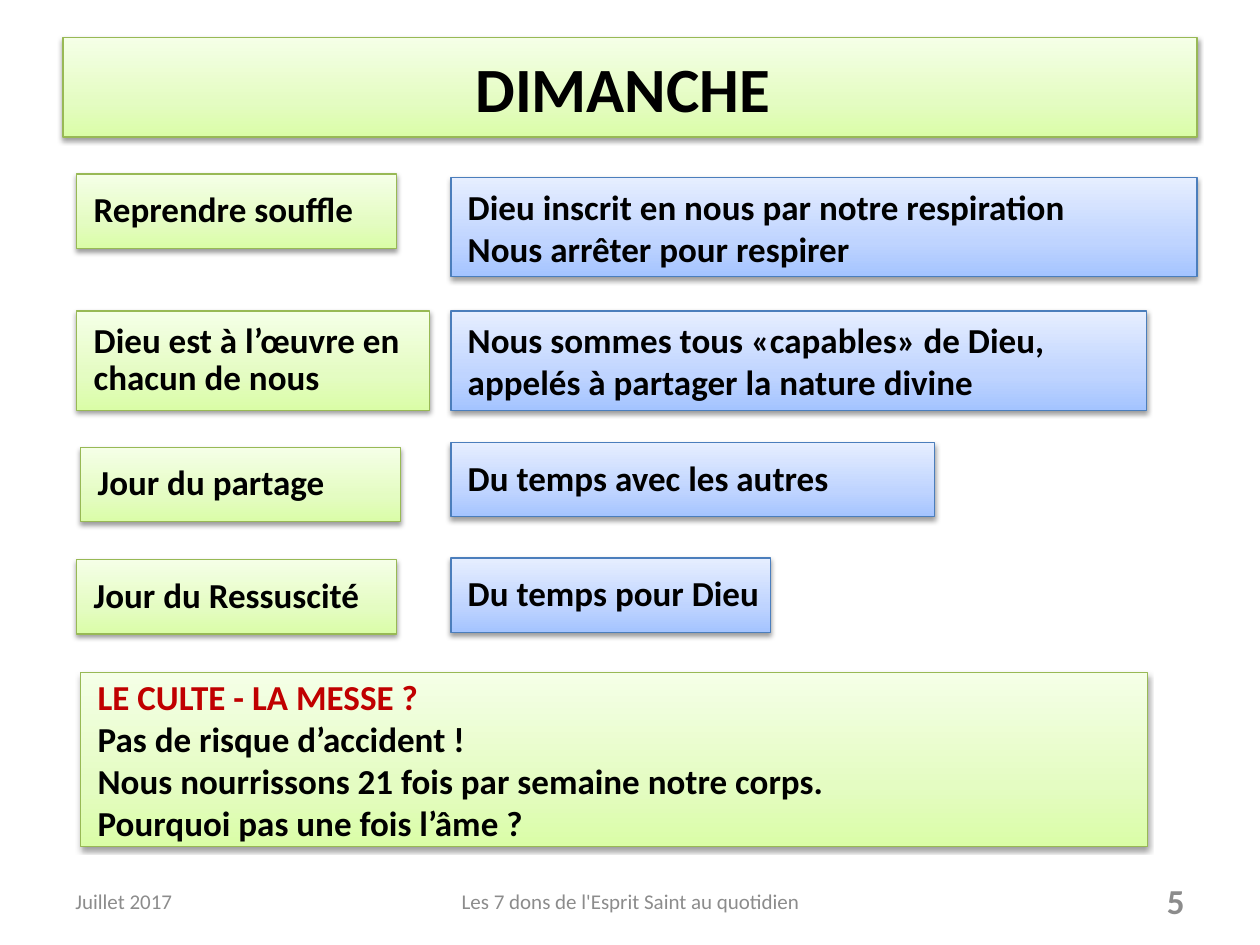
from dataclasses import dataclass

from lxml import etree
from pptx import Presentation
from pptx.dml.color import RGBColor
from pptx.enum.shapes import MSO_SHAPE
from pptx.enum.text import MSO_ANCHOR, MSO_AUTO_SIZE, PP_ALIGN
from pptx.oxml.ns import qn
from pptx.util import Cm, Pt

RECTANGLE = MSO_SHAPE.RECTANGLE
MIDDLE = MSO_ANCHOR.MIDDLE
NO_AUTOFIT = MSO_AUTO_SIZE.NONE
LEFT, CENTER, RIGHT = PP_ALIGN.LEFT, PP_ALIGN.CENTER, PP_ALIGN.RIGHT

FONT = "Calibri"
COLORS = {
    "text": "000000",
    "accent": "C00000",
    "footer": "8C8C8C",
    "green_line": "98B955",
    "blue_line": "4B7EBC",
}
GRADIENTS = {
    "green": {0: "DAFDA7", 35: "E4FCC2", 100: "F5FFE7"},
    "blue": {0: "A4C4FF", 35: "BFD4FF", 100: "E6EEFF"},
}
TOPIC_LEFT, ANSWER_LEFT = 1.55, 9.09
ONE_LINE, TWO_LINES = 1.5, 2.0
TIGHT = 0.9


@dataclass
class Panel:
    left: float
    top: float
    width: float
    height: float
    theme: str
    lines: list[str]
    spacing: float = 1.0
    first_color: str = "text"


@dataclass
class FooterItem:
    left: float
    width: float
    text: str
    align: PP_ALIGN
    size: int = 12
    bold: bool = False


PANELS = [
    Panel(TOPIC_LEFT, 3.51, 6.45, ONE_LINE, "green", ["Reprendre souffle"], TIGHT),
    Panel(ANSWER_LEFT, 3.58, 15.04, TWO_LINES, "blue",
          ["Dieu inscrit en nous par notre respiration", "Nous arrêter pour respirer"]),
    Panel(TOPIC_LEFT, 6.27, 7.11, TWO_LINES, "green",
          ["Dieu est à l’œuvre en chacun de nous"], TIGHT),
    Panel(ANSWER_LEFT, 6.27, 14.02, TWO_LINES, "blue",
          ["Nous sommes tous «capables» de Dieu, appelés à partager la nature divine"]),
    Panel(1.63, 9.02, 6.45, ONE_LINE, "green", ["Jour du partage"], TIGHT),
    Panel(ANSWER_LEFT, 8.92, 9.75, ONE_LINE, "blue", ["Du temps avec les autres"], TIGHT),
    Panel(TOPIC_LEFT, 11.28, 6.45, ONE_LINE, "green", ["Jour du Ressuscité"], TIGHT),
    Panel(ANSWER_LEFT, 11.25, 6.45, ONE_LINE, "blue", ["Du temps pour Dieu"], TIGHT),
    Panel(1.63, 13.56, 21.51, 3.5, "green",
          ["LE CULTE - LA MESSE ?", "Pas de risque d’accident !",
           "Nous nourrissons 21 fois par semaine notre corps.",
           "Pourquoi pas une fois l’âme ?"], first_color="accent"),
]
FOOTER = [
    FooterItem(1.27, 5.92, "Juillet 2017", LEFT),
    FooterItem(8.69, 8.05, "Les 7 dons de l'Esprit Saint au quotidien", CENTER),
    FooterItem(18.21, 5.92, "5", RIGHT, size=20, bold=True),
]


def write(para, text: str, *, size: int, color: str = "text", bold: bool = False,
          align: PP_ALIGN = LEFT, spacing: float = 1.0) -> None:
    para.alignment = align
    para.line_spacing = spacing
    para.space_before = para.space_after = Pt(0)
    span = para.add_run()
    span.text = text
    span.font.name = FONT
    span.font.size = Pt(size)
    span.font.bold = bold
    span.font.color.rgb = RGBColor.from_string(COLORS[color])


def prepare_frame(box):
    frame = box.text_frame
    frame.word_wrap = True
    frame.auto_size = NO_AUTOFIT
    frame.vertical_anchor = MIDDLE
    return frame


def add_color(parent, value: str):
    return etree.SubElement(parent, qn("a:srgbClr"), val=value)


def style_surface(box, theme: str) -> None:
    box.fill.gradient()
    box.fill.gradient_angle = 90
    properties = box._element.spPr
    stops = properties.find(".//" + qn("a:gsLst"))
    for stop in list(stops):
        stops.remove(stop)
    for position, value in GRADIENTS[theme].items():
        add_color(etree.SubElement(stops, qn("a:gs"), pos=str(position * 1000)), value)
    box.line.color.rgb = RGBColor.from_string(COLORS[theme + "_line"])
    box.line.width = Pt(0.75)
    box.shadow.inherit = False
    shadow = etree.SubElement(
        properties.find(qn("a:effectLst")), qn("a:outerShdw"),
        blurRad=str(Pt(3.1)), dist=str(Pt(1.6)), dir="5400000", rotWithShape="0")
    etree.SubElement(add_color(shadow, "000000"), qn("a:alpha"), val="38000")


def draw_title(page) -> None:
    box = page.shapes.title
    box.left, box.top, box.width, box.height = Cm(1.27), Cm(0.76), Cm(22.86), Cm(2)
    style_surface(box, "green")
    write(prepare_frame(box).paragraphs[0], "DIMANCHE ", size=36, bold=True, align=CENTER)


def draw_panel(page, panel: Panel) -> None:
    box = page.shapes.add_shape(RECTANGLE, Cm(panel.left), Cm(panel.top),
                                Cm(panel.width), Cm(panel.height))
    style_surface(box, panel.theme)
    frame = prepare_frame(box)
    frame.margin_left = frame.margin_right = Cm(0.03)
    frame.margin_top = frame.margin_bottom = Cm(0.03)
    for index, text in enumerate(panel.lines):
        para = frame.add_paragraph() if index else frame.paragraphs[0]
        indent = para._p.get_or_add_pPr()
        indent.set("marL", str(Cm(0.31)))
        indent.set("indent", "0")
        write(para, text, size=20, bold=True, spacing=panel.spacing,
              color="text" if index else panel.first_color)


def draw_footer(page, item: FooterItem) -> None:
    box = page.shapes.add_textbox(Cm(item.left), Cm(17.65), Cm(item.width), Cm(1.02))
    write(prepare_frame(box).paragraphs[0], item.text, size=item.size,
          color="footer", bold=item.bold, align=item.align)


def main() -> None:
    deck = Presentation()
    deck.slide_width, deck.slide_height = Cm(25.4), Cm(19.05)
    page = deck.slides.add_slide(deck.slide_layouts[5])
    draw_title(page)
    for panel in PANELS:
        draw_panel(page, panel)
    for item in FOOTER:
        draw_footer(page, item)
    deck.save("out.pptx")


if __name__ == "__main__":
    main()
